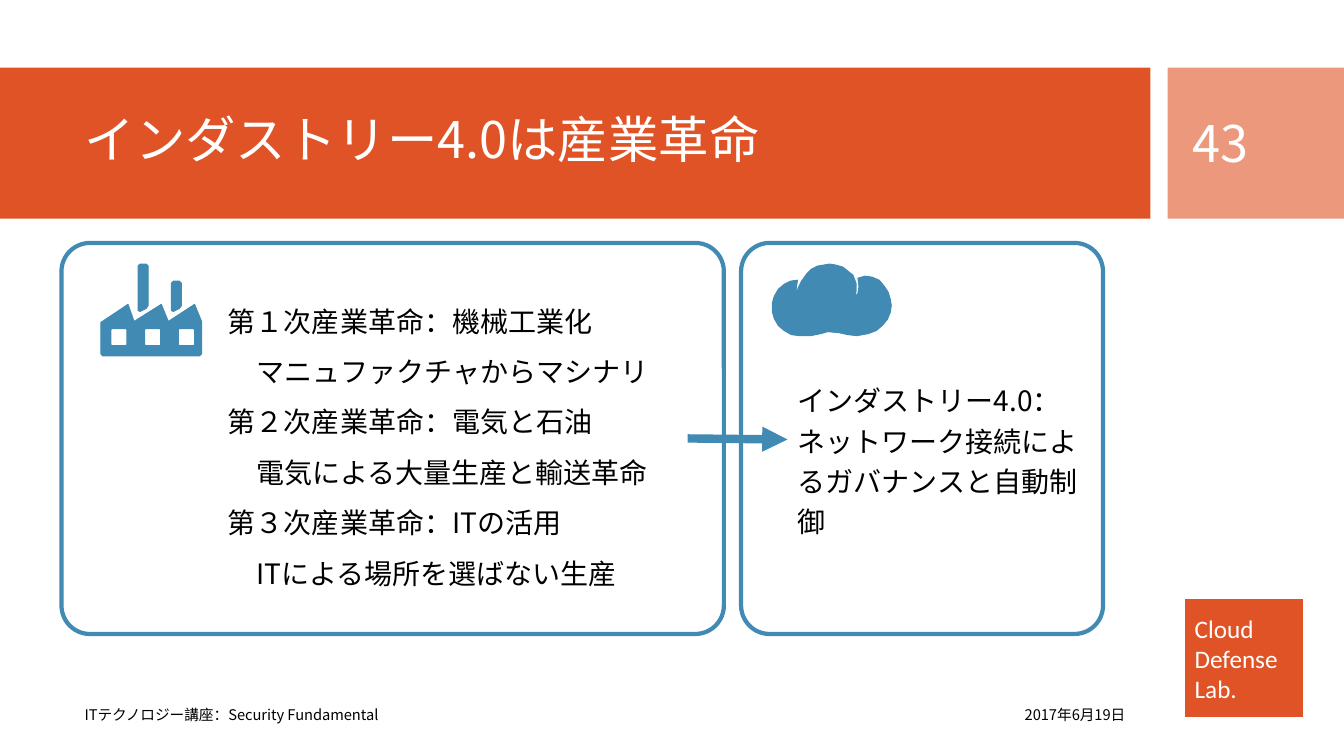
from dataclasses import dataclass

from lxml.etree import SubElement
from pptx import Presentation
from pptx.dml.color import RGBColor
from pptx.enum.shapes import MSO_CONNECTOR, MSO_SHAPE
from pptx.enum.text import MSO_ANCHOR, MSO_AUTO_SIZE, PP_ALIGN
from pptx.oxml.ns import qn
from pptx.util import Inches, Pt


@dataclass(frozen=True)
class Theme:
    red: RGBColor = RGBColor(0xDF, 0x53, 0x27)
    pink: RGBColor = RGBColor(0xEC, 0x98, 0x7D)
    blue: RGBColor = RGBColor(0x41, 0x8A, 0xB3)
    white: RGBColor = RGBColor(0xFF, 0xFF, 0xFF)
    black: RGBColor = RGBColor(0, 0, 0)
    font: str = "Noto Sans CJK JP"
    latin: str = "Calibri"
    head: float = 36
    body: float = 20
    badge: float = 18
    foot: float = 10.5


THEME = Theme()

# Each stage of the history: heading, then its indented detail
STAGES = [
    ("第１次産業革命：機械工業化", "マニュファクチャからマシナリ"),
    ("第２次産業革命：電気と石油", "電気による大量生産と輸送革命"),
    ("第３次産業革命：ITの活用", "ITによる場所を選ばない生産"),
]

CLOUD = [
    (7.93, 3.33), (7.85, 3.32), (7.78, 3.28), (7.72, 3.23), (7.68, 3.16),
    (7.66, 3.09), (7.66, 3.01), (7.68, 2.94), (7.72, 2.87), (7.78, 2.82),
    (7.84, 2.79), (7.91, 2.78), (7.9, 2.84), (7.89, 2.94), (7.92, 2.85),
    (7.95, 2.79), (8, 2.72), (8.05, 2.67), (8.11, 2.64), (8.17, 2.63),
    (8.23, 2.62), (8.29, 2.63), (8.36, 2.65), (8.41, 2.69), (8.46, 2.73),
    (8.49, 2.81), (8.49, 2.89), (8.48, 2.95), (8.51, 2.91), (8.52, 2.84),
    (8.51, 2.76), (8.58, 2.74), (8.65, 2.75), (8.72, 2.78), (8.77, 2.84),
    (8.81, 2.9), (8.83, 2.97), (8.84, 3.03), (8.83, 3.1), (8.8, 3.17),
    (8.75, 3.23), (8.69, 3.28), (8.61, 3.31), (8.5, 3.33), (8.41, 3.32),
    (8.32, 3.3), (8.21, 3.29), (8.14, 3.31), (8.04, 3.33),
]


def place(shape, box):
    shape.left, shape.top, shape.width, shape.height = map(Inches, box)


def write(shape, lines, *, size, color=THEME.black, font=THEME.font,
          align=PP_ALIGN.LEFT, anchor=MSO_ANCHOR.MIDDLE, space=1.0):
    """Fill a shape with (text, indent in inches) lines."""
    frame = shape.text_frame
    frame.word_wrap = True
    frame.auto_size = MSO_AUTO_SIZE.NONE
    frame.vertical_anchor = anchor
    for i, (text, indent) in enumerate(lines):
        para = frame.add_paragraph() if i else frame.paragraphs[0]
        para.alignment = align
        para.line_spacing = space
        para.space_before = Pt(0)
        props = para._p.get_or_add_pPr()
        props.set("marL", str(Inches(indent)))
        props.set("indent", "0")
        SubElement(props, qn("a:buNone"))
        run = para.add_run()
        run.text = text
        run.font.size = Pt(size)
        run.font.color.rgb = color
        run.font.name = font
        SubElement(run._r.get_or_add_rPr(), qn("a:ea"), typeface=font)


def label(slide, text, box, **style):
    shape = slide.shapes.add_textbox(*map(Inches, box))
    write(shape, [(text, 0)], **style)


def block(slide, box, fill, edge=None):
    shape = slide.shapes.add_shape(MSO_SHAPE.RECTANGLE, *map(Inches, box))
    shape.shadow.inherit = False
    shape.fill.solid()
    shape.fill.fore_color.rgb = fill
    if edge is None:
        shape.line.fill.background()
    else:
        shape.line.color.rgb = edge
        shape.line.width = Pt(1)
    return shape


def panel(slide, left, width):
    shape = slide.shapes.add_shape(
        MSO_SHAPE.ROUNDED_RECTANGLE,
        *map(Inches, (left, 2.41, width, 3.88)))
    shape.adjustments[0] = 0.073 * 3.88 / min(width, 3.88)
    shape.shadow.inherit = False
    shape.fill.background()
    shape.line.color.rgb = THEME.blue
    shape.line.width = Pt(3)


def icon(slide, loops):
    """Draw closed outlines as one shape; inner loops become holes."""
    pen = None
    for loop in loops:
        first, *rest = [(Inches(x), Inches(y)) for x, y in loop]
        if pen is None:
            pen = slide.shapes.build_freeform(*first)
        else:
            pen.move_to(*first)
        pen.add_line_segments(rest, close=True)
    shape = pen.convert_to_shape()
    shape.shadow.inherit = False
    shape.fill.solid()
    shape.fill.fore_color.rgb = THEME.blue
    shape.line.color.rgb = THEME.blue
    shape.line.width = Pt(0.75)


def stack(left, top):
    """Outline of a chimney with a slanted foot."""
    right = left + 0.1
    return [(left, top + 0.02), (left + 0.02, top), (right - 0.02, top),
            (right, top + 0.02), (right, 3.03), (right - 0.02, 3.06),
            (left + 0.02, 3.09), (left, 3.08)]


def pane(left):
    right = left + 0.16
    return [(left, 3.27), (left + 0.01, 3.26), (right - 0.01, 3.26),
            (right, 3.27), (right, 3.42), (right - 0.01, 3.43),
            (left + 0.01, 3.43), (left, 3.42)]


def plant(slide):
    hall = [(1, 3.2), (1.27, 3.02), (1.33, 3.19), (1.6, 3.02),
            (1.67, 3.19), (1.93, 3.02), (2, 3.19), (2, 3.51),
            (1.98, 3.53), (1.02, 3.53), (1, 3.51)]
    panes = [pane(1.1 + 0.335 * i) for i in range(3)]
    icon(slide, [stack(1.37, 2.62), hall, *panes, stack(1.7, 2.79)])


def arrow(slide, start, end):
    link = slide.shapes.add_connector(
        MSO_CONNECTOR.STRAIGHT, *map(Inches, start + end))
    link.line.color.rgb = THEME.blue
    link.line.width = Pt(6)
    SubElement(link.line._get_or_add_ln(), qn("a:tailEnd"), type="triangle")
    SubElement(link.element.spPr, qn("a:effectLst"))


def main():
    deck = Presentation()
    deck.slide_width, deck.slide_height = Inches(13.33), Inches(7.5)
    slide = deck.slides.add_slide(deck.slide_layouts.get_by_name("Two Content"))
    title, past, future = slide.placeholders

    badge = block(slide, (11.75, 5.94, 1.18, 1.18), THEME.red, THEME.white)
    write(badge, [(word, 0) for word in ("Cloud", "Defense", "Lab.")],
          size=THEME.badge, color=THEME.white, font=THEME.latin)
    block(slide, (0, 0.67, 11.41, 1.5), THEME.red)
    block(slide, (11.58, 0.67, 1.75, 1.5), THEME.pink)

    place(title, (0.74, 0.82, 10.51, 1.18))
    write(title, [("インダストリー4.0は産業革命", 0)],
          size=THEME.head, color=THEME.white, space=0.9)
    slide.shapes.element.append(title.element)  # bring above the banner
    label(slide, "43", (11.73, 0.82, 1.26, 1.19),
          size=THEME.head, color=THEME.white)
    label(slide, "2017年6月19日", (8.26, 6.89, 3, 0.4),
          size=THEME.foot, align=PP_ALIGN.RIGHT)
    label(slide, "ITテクノロジー講座：Security Fundamental",
          (0.74, 6.89, 7.51, 0.4), size=THEME.foot)

    panel(slide, 0.61, 6.57)
    panel(slide, 7.35, 3.59)
    plant(slide)
    icon(slide, [CLOUD])
    arrow(slide, (6.82, 4.35), (7.81, 4.36))

    place(past, (2.16, 2.8, 4.67, 3.13))
    write(past, [line for name, note in STAGES
                 for line in ((name, 0), (note, 0.28))],
          size=THEME.body, anchor=MSO_ANCHOR.TOP, space=1.5)
    place(future, (7.81, 3.69, 3.01, 1.72))
    write(future, [("インダストリー4.0：", 0),
                   ("ネットワーク接続によるガバナンスと自動制御", 0)],
          size=THEME.body, anchor=MSO_ANCHOR.TOP, space=1.2)
    deck.save("out.pptx")


if __name__ == "__main__":
    main()
